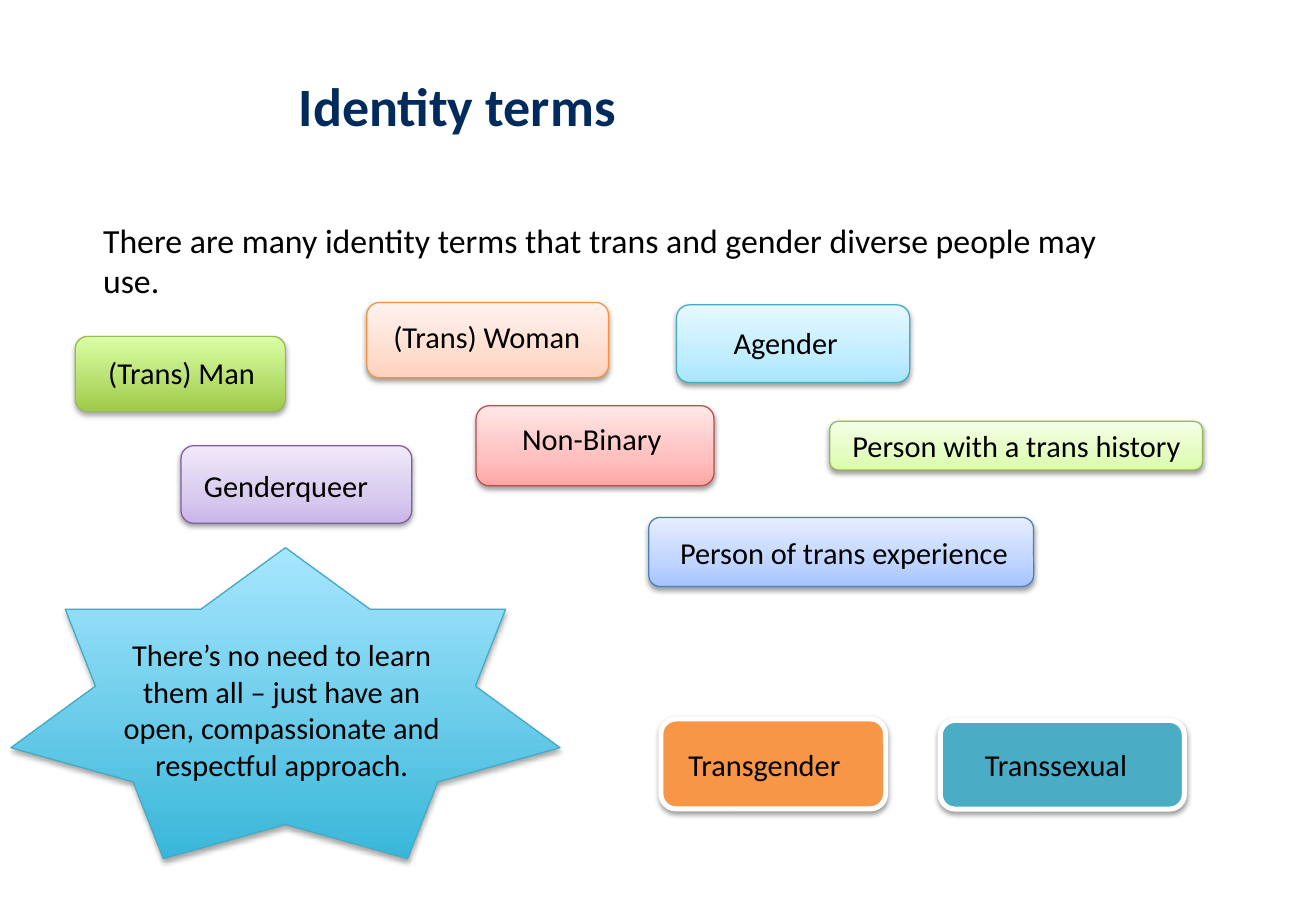
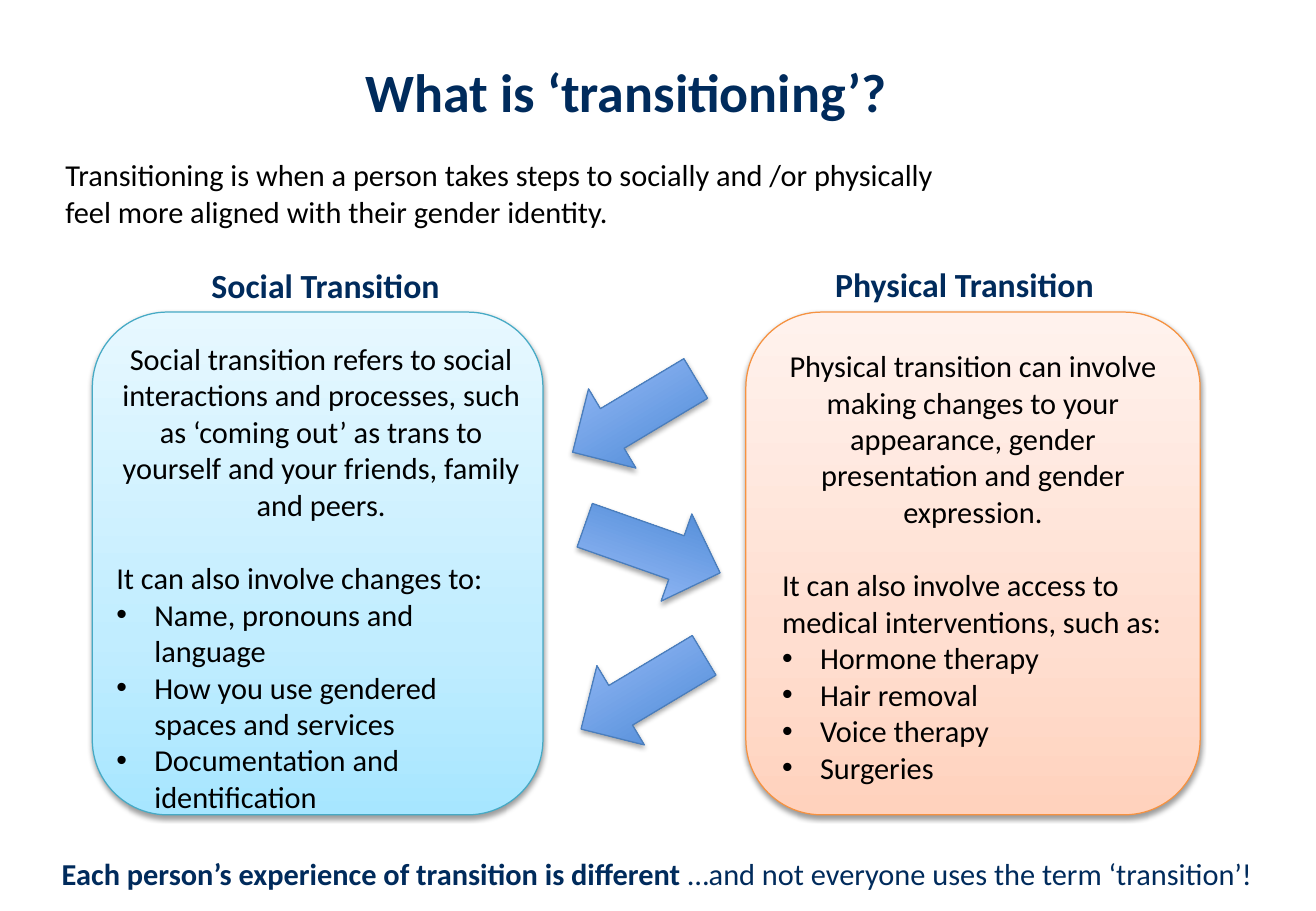
"""Build two slides on identity terms and on transitioning."""
from copy import deepcopy
from lxml import etree
from pptx import Presentation
from pptx.dml.color import RGBColor
from pptx.enum import shapes as kinds, text as txt
from pptx.oxml import ns
from pptx.util import Pt

FONT = "Calibri"
INK = {"navy": "002B5C", "black": "000000"}
LOOKS = {
    "star": (["39B7D8", "A7E6FF"], "46AAC5"),
    "lime": (["A0CA4A", "DAFFA5"], "98B955"),
    "arrow": (["3F80CE", "A4C4FF"], "4B7EBC"),
    "peach": (["FFD2BD", "FFDED0", "FFF2ED"], "F69240"),
    "rose": (["FFA6A5", "FFC0BF", "FFE7E7"], "BF4C48"),
    "lilac": (["C9B5E8", "D8CBEE", "F0EAF9"], "7D60A0"),
    "sky": (["A7E6FF", "C1EDFF", "E7F8FF"], "46AAC5"),
    "mint": (["DAFDA7", "E4FCC2", "F5FFE7"], "98B955"),
    "blue": (["A4C4FF", "BFD4FF", "E6EEFF"], "4B7EBC"),
    "orange": (["F79646"], "FFFFFF"),
    "teal": (["4BACC6"], "FFFFFF"),
}
ROUND = kinds.MSO_SHAPE.ROUNDED_RECTANGLE
STAR = kinds.MSO_SHAPE.STAR_7_POINT
ARROW = kinds.MSO_SHAPE.LEFT_ARROW
MID = txt.PP_ALIGN.CENTER
LINE = 29

ADVICE = ("There’s no need to learn them all – just have an open, "
          "compassionate and respectful approach.")
TERMS = [
    ("(Trans) Man", "lime", (44.6, 199.4, 124.6, 44.6), (57, 206.6, 149)),
    ("(Trans) Woman", "peach", (217.4, 179.3, 143.3, 44.6), (226, 185, 143.3)),
    ("Non-Binary", "rose", (282.2, 240.5, 141.1, 47.5), (302.4, 245.5, 136.8)),
    ("Genderqueer", "lilac", (107.3, 264.2, 136.8, 46), (113.8, 273.6, 136.8)),
    ("Agender", "sky", (401, 180.7, 138.2, 46), (427.7, 188.6, 123.8)),
    ("Person with a trans history", "mint", (491.8, 249.8, 221, 28.8),
     (498.2, 249.8, 228.2)),
    ("Person of trans experience", "blue", (384.5, 306.7, 228.2, 41),
     (396, 313.2, 216)),
    ("Transgender", "orange", (391.7, 426.2, 133.2, 53.3), (401, 438.5, 116)),
    ("Transsexual", "teal", (557.3, 427, 144.7, 52.6), (576.7, 438.5, 124.6)),
]
PANELS = [
    ("Social Transition", "sky", (54.7, 185, 267.1, 298), (92.2, 153.4),
     (61.9, 198, 257, 334),
     "Social transition refers to social interactions and processes, such as "
     "‘coming out’ as trans to yourself and your friends, family and peers.",
     "It can also involve changes to:",
     ["Name, pronouns and language", "How you use gendered spaces and services",
      "Documentation and identification"]),
    ("Physical Transition", "peach", (442.1, 185, 269.3, 298), (470.9, 152.6),
     (456.5, 202.3, 240.5, 312.5),
     "Physical transition can involve making changes to your appearance, "
     "gender presentation and gender expression.",
     "It can also involve access to medical interventions, such as:",
     ["Hormone therapy", "Hair removal", "Voice therapy", "Surgeries"]),
]
ARROWS = [(333.4, 218.9, 329.1), (344.2, 298.1, 199.4), (338.4, 383, 329.1)]


def rgb(code):
    return RGBColor.from_string(code)


def sub(node, tag, **attrs):
    return etree.SubElement(node, ns.qn(tag), attrs)


def shade(shape, dim, gap):
    shape.shadow.inherit = False
    fx = shape._element.spPr.find(ns.qn("a:effectLst"))
    drop = sub(fx, "a:outerShdw", blurRad="40000", dist=str(gap),
               dir="5400000", rotWithShape="0")
    tint = sub(drop, "a:srgbClr", val=INK["black"])
    sub(tint, "a:alpha", val=str(dim * 1000))


def paint(fill, tones):
    if len(tones) == 1:
        fill.solid()
        fill.fore_color.rgb = rgb(tones[0])
        return
    fill.gradient()
    fill.gradient_angle = 90
    if len(tones) == 3:
        first = fill.gradient_stops[0]._gs
        first.addnext(deepcopy(first))
    spots = [0, 0.35, 1] if len(tones) == 3 else [0, 1]
    for stop, spot, tone in zip(fill.gradient_stops, spots, tones):
        stop.position = spot
        stop.color.rgb = rgb(tone)


def draw(home, kind, box, look, turn=0):
    tones, edge = LOOKS[look]
    shape = home.shapes.add_shape(kind, *map(Pt, box))
    shape.rotation = turn
    paint(shape.fill, tones)
    shape.line.color.rgb = rgb(edge)
    shape.line.width = Pt(3 if len(tones) == 1 else 0.75)
    shade(shape, *((35, 23000) if len(tones) == 2 else (38, 20000)))


def style(para, size=18, ink="black", bold=False):
    for run in para.runs:
        font = run.font
        font.name, font.size, font.bold = FONT, Pt(size), bold
        font.color.rgb = rgb(INK[ink])


def write(home, box, words, align=None, **look):
    frame = home.shapes.add_textbox(*map(Pt, box)).text_frame
    frame.word_wrap = True
    frame.text = words
    para = frame.paragraphs[0]
    para.alignment = align
    style(para, **look)
    return frame


def add(frame, words):
    para = frame.add_paragraph()
    para.text = words
    style(para)
    return para


def bullet(para):
    props = para._p.get_or_add_pPr()
    props.set("marL", str(Pt(22.5)))
    props.set("indent", str(-Pt(22.5)))
    sub(props, "a:buFont", typeface="Arial")
    sub(props, "a:buChar", char="•")


def start(deck, title, x, y):
    slide = deck.slides.add_slide(deck.slide_layouts[6])
    write(slide, (x, y, 523, 46), title, size=32, ink="navy", bold=True)
    return slide


def terms(deck):
    slide = start(deck, "Identity terms", 170, 39.6)
    write(slide, (54, 126.7, 638, 31.7),
          "There are many identity terms that trans and gender diverse "
          "people may use.", size=20)
    group = slide.shapes.add_group_shape()
    draw(group, STAR, (6.5, 324.7, 325.4, 184.3), "star")
    write(group, (65.5, 373.7, 203, 94.3), ADVICE, MID)
    for name, look, card, label in TERMS:
        group = slide.shapes.add_group_shape()
        draw(group, ROUND, card, look)
        write(group, (*label, LINE), name)


def change(deck):
    slide = start(deck, "What is ‘transitioning’?", 209.5, 31)
    write(slide, (31.7, 89.3, 555.8, 51),
          "Transitioning is when a person takes steps to socially and /or "
          "physically feel more aligned with their gender identity.")
    for head, look, card, spot, body, about, lead, items in PANELS:
        draw(slide, ROUND, card, look)
        write(slide, (*spot, 201.6, 31.7), head, MID,
              size=20, ink="navy", bold=True)
        frame = write(slide, body, about, MID)
        add(frame, lead).space_before = Pt(22)
        for item in items:
            bullet(add(frame, item))
    for x, y, turn in ARROWS:
        draw(slide, ARROW, (x, y, 85, 54.7), "arrow", turn)
    foot = write(slide, (29.5, 503.3, 732.2, LINE),
                 "Each person’s experience of transition is different")
    para = foot.paragraphs[0]
    para.add_run().text = " …and not everyone uses the term ‘transition’!"
    style(para, ink="navy")
    para.runs[0].font.bold = True


def main():
    deck = Presentation()
    deck.slide_width, deck.slide_height = Pt(780), Pt(540)
    terms(deck)
    change(deck)
    deck.save("out.pptx")


if __name__ == "__main__":
    main()
